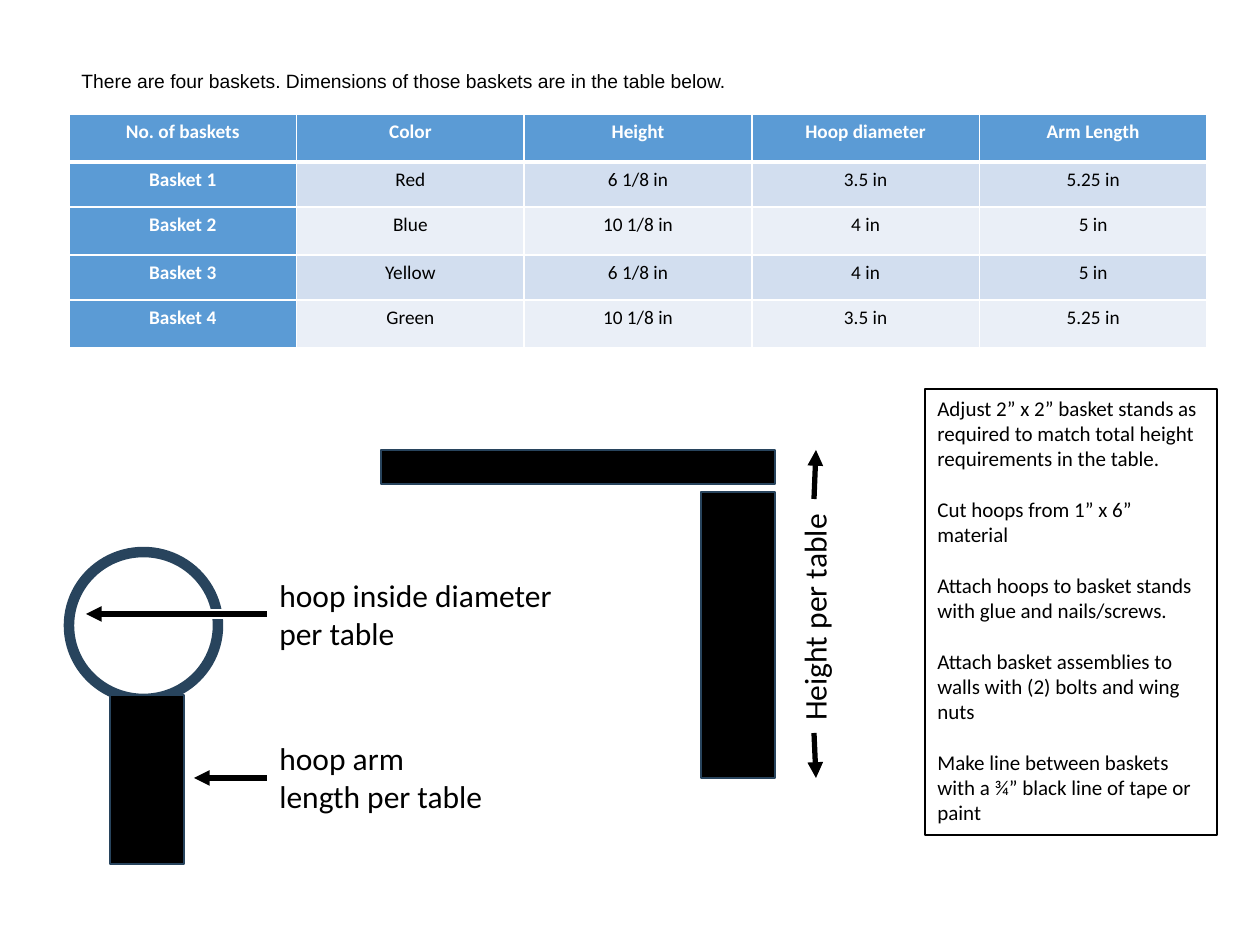
import lxml.etree
import pptx
import pptx.dml.color
import pptx.enum.shapes
import pptx.enum.text
import pptx.oxml.ns
import pptx.util

RGB = pptx.dml.color.RGBColor
BLACK = RGB(0x00, 0x00, 0x00)
WHITE = RGB(0xFF, 0xFF, 0xFF)
NAVY = RGB(0x28, 0x44, 0x5D)
BLUE = RGB(0x5B, 0x9B, 0xD5)
BANDS = (RGB(0xD2, 0xDE, 0xEF), RGB(0xEA, 0xEF, 0xF7))

SHAPE = pptx.enum.shapes.MSO_SHAPE
ANCHOR = pptx.enum.text.MSO_ANCHOR
ALIGN = pptx.enum.text.PP_ALIGN
Pt = pptx.util.Pt
qn = pptx.oxml.ns.qn

BASKETS = [
    ["No. of baskets", "Color", "Height", "Hoop diameter", "Arm Length"],
    ["Basket 1", "Red", "6 1/8 in", "3.5 in", "5.25 in"],
    ["Basket 2", "Blue", "10 1/8 in", "4 in", "5 in"],
    ["Basket 3", "Yellow", "6 1/8 in", "4 in", "5 in"],
    ["Basket 4", "Green", "10 1/8 in", "3.5 in", "5.25 in"],
]
ROW_HEIGHTS = [48, 45, 48, 45, 48]
STEPS = [
    "Adjust 2” x 2” basket stands as required to match total height requirements in the table.",
    "Cut hoops from 1” x 6” material",
    "Attach hoops to basket stands with glue and nails/screws.",
    "Attach basket assemblies to walls with (2) bolts and wing nuts",
    "Make line between baskets with a ¾” black line of tape or paint",
]


def px(n):
    return pptx.util.Emu(round(n * 914400 / 126))


def apply(obj, values):
    for name, value in values.items():
        setattr(obj, name, value)


class Sheet:
    font = "Calibri"
    cell_format = {"margin_left": px(10), "margin_right": px(10),
                   "margin_top": px(4), "margin_bottom": 0}

    def __init__(self, slide):
        self.s = slide

    def paragraphs(self, tf, lines, size, gap=0, font=None, color=BLACK, bold=False, **para):
        for i, line in enumerate(lines):
            p = tf.paragraphs[0] if i == 0 else tf.add_paragraph()
            apply(p, {"alignment": ALIGN.LEFT, **para})
            if i and gap:
                p.space_before = Pt(gap)
            r = p.add_run()
            r.text = line
            apply(r.font, {"name": font or self.font, "size": Pt(size), "bold": bold})
            r.font.color.rgb = color

    def text(self, box, lines, size, rotation=0, wrap=False, anchor=ANCHOR.TOP, font=None):
        sp = self.s.shapes.add_textbox(*map(px, box))
        sp.rotation = rotation
        apply(sp.text_frame, {"word_wrap": wrap, "vertical_anchor": anchor,
                              "auto_size": pptx.enum.text.MSO_AUTO_SIZE.SHAPE_TO_FIT_TEXT})
        self.paragraphs(sp.text_frame, lines, size, font=font)

    def shape(self, kind, box, fill, line, width):
        sp = self.s.shapes.add_shape(kind, *map(px, box))
        sp.shadow.inherit = False
        sp.fill.solid()
        sp.fill.fore_color.rgb = fill
        sp.line.color.rgb = line
        sp.line.width = Pt(width)
        return sp

    def note(self, box, lines, size, gap):
        sp = self.shape(SHAPE.RECTANGLE, box, WHITE, BLACK, 0.75)
        apply(sp.text_frame, {"word_wrap": True, "vertical_anchor": ANCHOR.TOP})
        self.paragraphs(sp.text_frame, lines, size, gap)

    def line(self, start, end, color=BLACK, width=3, arrow=True):
        sp = self.s.shapes.add_connector(
            pptx.enum.shapes.MSO_CONNECTOR.STRAIGHT, *map(px, start + end))
        sp.line.color.rgb = color
        sp.line.width = Pt(width)
        spPr = sp._element.spPr
        if arrow:
            lxml.etree.SubElement(spPr.find(qn("a:ln")), qn("a:tailEnd"), type="triangle")
        lxml.etree.SubElement(spPr, qn("a:effectLst"))

    def borders(self, cell, widths):
        tcPr = cell._tc.get_or_add_tcPr()
        for i, (side, width) in enumerate(zip("LRTB", widths)):
            ln = lxml.etree.Element(qn("a:ln" + side), w=str(Pt(width)))
            fill = lxml.etree.SubElement(ln, qn("a:solidFill"))
            lxml.etree.SubElement(fill, qn("a:srgbClr"), val=str(WHITE))
            tcPr.insert(i, ln)

    def table(self, left, top, width, heights, rows, size):
        tbl = self.s.shapes.add_table(
            len(rows), len(rows[0]), *map(px, (left, top, width, sum(heights)))).table
        apply(tbl, {"first_row": False, "horz_banding": False})
        for i, row in enumerate(rows):
            tbl.rows[i].height = px(heights[i])
            for j, value in enumerate(row):
                cell = tbl.cell(i, j)
                head = i == 0 or j == 0
                apply(cell, self.cell_format)
                cell.fill.solid()
                cell.fill.fore_color.rgb = BLUE if head else BANDS[(i - 1) % 2]
                self.borders(cell, (1, 1, 3 if i == 1 else 1, 3 if i == 0 else 1))
                self.paragraphs(cell.text_frame, [value], size, color=WHITE if head else BLACK,
                                bold=head, alignment=ALIGN.CENTER, line_spacing=1.07)


def main():
    prs = pptx.Presentation()
    apply(prs, {"slide_width": px(1260), "slide_height": px(945)})
    sheet = Sheet(prs.slides.add_slide(prs.slide_layouts[6]))

    sheet.table(69, 114, 1138, ROW_HEIGHTS, BASKETS, 11)
    sheet.text((69, 62, 849, 37),
               ["There are four baskets. Dimensions of those baskets are in the table below."],
               11, wrap=True, anchor=ANCHOR.MIDDLE, font="Arial")

    sheet.shape(SHAPE.OVAL, (69, 552, 149, 147), WHITE, NAVY, 6)
    sheet.shape(SHAPE.RECTANGLE, (110, 695, 74, 169), BLACK, NAVY, 1)
    sheet.note((925, 389, 292, 446), STEPS, 12, 14.6)
    sheet.shape(SHAPE.RECTANGLE, (701, 492, 74, 286), BLACK, NAVY, 1)
    sheet.shape(SHAPE.RECTANGLE, (381, 450, 394, 34), BLACK, NAVY, 1)

    sheet.text((697, 591, 234, 50), ["Height per table"], 18, rotation=270)
    sheet.line((814, 499), (816, 450))
    sheet.line((814, 733), (816, 778))
    sheet.text((267, 570, 301, 89), ["hoop inside diameter", "per table"], 18)
    sheet.text((267, 733, 231, 89), ["hoop arm", "length per table"], 18)
    sheet.line((267, 778), (194, 778))
    sheet.line((194, 614), (234, 614), WHITE, 6, arrow=False)
    sheet.line((267, 614), (86, 614))

    prs.save("out.pptx")


if __name__ == "__main__":
    main()
